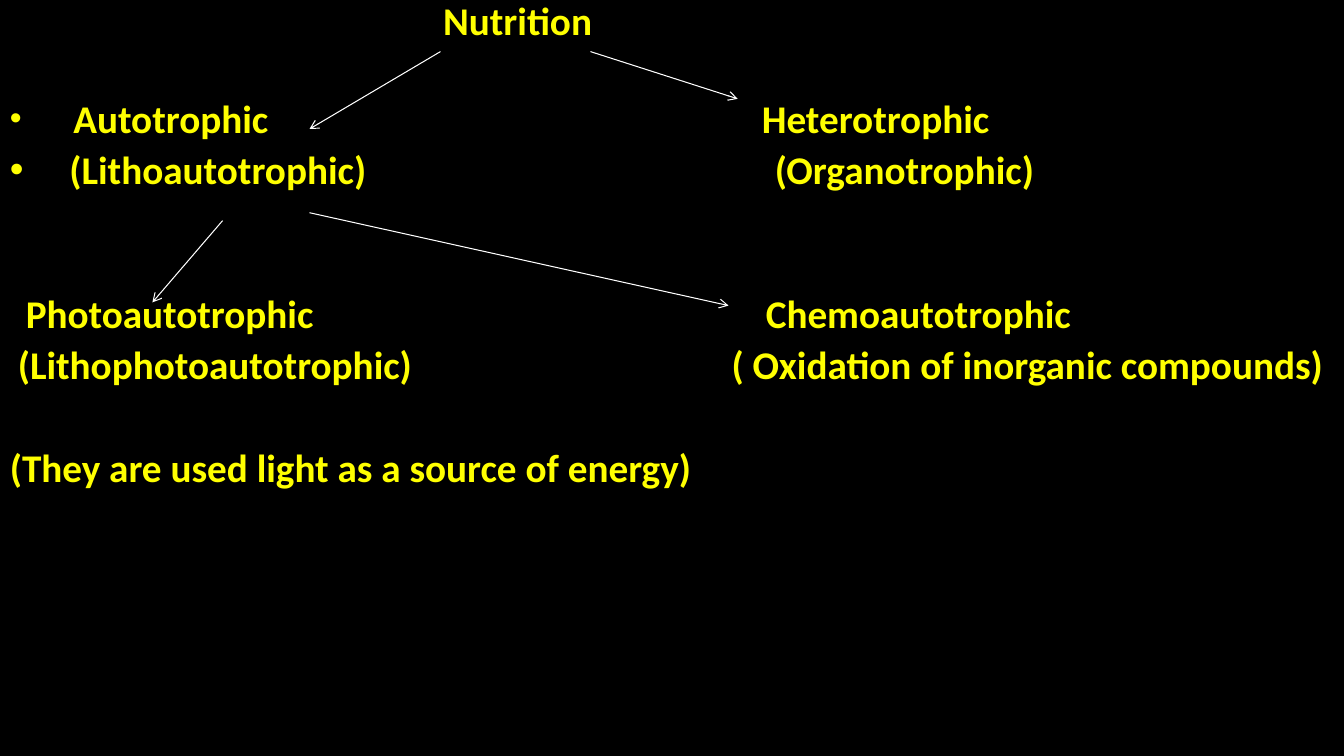
from lxml.etree import SubElement
from pptx import Presentation
from pptx.dml.color import RGBColor
from pptx.enum.shapes import MSO_CONNECTOR
from pptx.oxml.ns import qn
from pptx.util import Cm, Pt

BLACK = RGBColor(0x00, 0x00, 0x00)
WHITE = RGBColor(0xFF, 0xFF, 0xFF)
YELLOW = RGBColor(0xFF, 0xFF, 0x00)

prs = Presentation()
prs.slide_width, prs.slide_height = Cm(33.87), Cm(19.05)
s = prs.slides.add_slide(prs.slide_layouts[6])
s.background.fill.solid()
s.background.fill.fore_color.rgb = BLACK

# left, top, width, lines as (text, indent, bullet size in percent or None)
labels = [
    (11.17, 0.13, 6, [("Nutrition", 0, None)]),
    (0.25, 2.6, 12, [("Autotrophic", 1.6, 86), ("(Lithoautotrophic)", 1.5, 100)]),
    (19.2, 2.6, 10, [("Heterotrophic", 0, None), ("(Organotrophic)", 0.33, None)]),
    (0.45, 7.51, 12, [("Photoautotrophic", 0.2, None),
                      ("(Lithophotoautotrophic)", 0, None)]),
    (18.44, 7.51, 15.4, [("Chemoautotrophic", 0.86, None),
                         ("( Oxidation of inorganic compounds)", 0, None)]),
    (0.25, 11.41, 20, [("(They are used light as a source of energy)", 0, None)]),
]
for left, top, width, lines in labels:
    box = s.shapes.add_textbox(Cm(left), Cm(top), Cm(width), Cm(1.3 * len(lines)))
    tf = box.text_frame
    tf.word_wrap = True
    tf.margin_left = tf.margin_right = tf.margin_top = tf.margin_bottom = 0
    for i, (text, indent, bullet) in enumerate(lines):
        p = tf.add_paragraph() if i else tf.paragraphs[0]
        p.text = text
        p.line_spacing = 0.8
        if i:
            p.space_before = Pt(10)
        pPr = p._p.get_or_add_pPr()
        pPr.set("marL", str(Cm(indent)))
        if bullet:
            pPr.set("indent", str(-Cm(indent)))
            SubElement(pPr, qn("a:buSzPct"), val=str(bullet * 1000))
            SubElement(pPr, qn("a:buFont"), typeface="Arial")
            SubElement(pPr, qn("a:buChar"), char="•")
        font = p.runs[0].font
        font.name, font.size, font.bold = "Calibri", Pt(28), True
        font.color.rgb = YELLOW

arrows = [
    (11.1, 1.3, 7.8, 3.25),
    (14.88, 1.3, 18.59, 2.49),
    (5.61, 5.56, 3.84, 7.62),
    (7.8, 5.36, 18.36, 7.7),
]
for ends in arrows:
    arrow = s.shapes.add_connector(MSO_CONNECTOR.STRAIGHT, *[Cm(v) for v in ends])
    arrow.line.color.rgb = WHITE
    arrow.line.width = Pt(0.75)
    SubElement(arrow.line._get_or_add_ln(), qn("a:tailEnd"), type="arrow")
    SubElement(arrow._element.spPr, qn("a:effectLst"))

prs.save("out.pptx")
